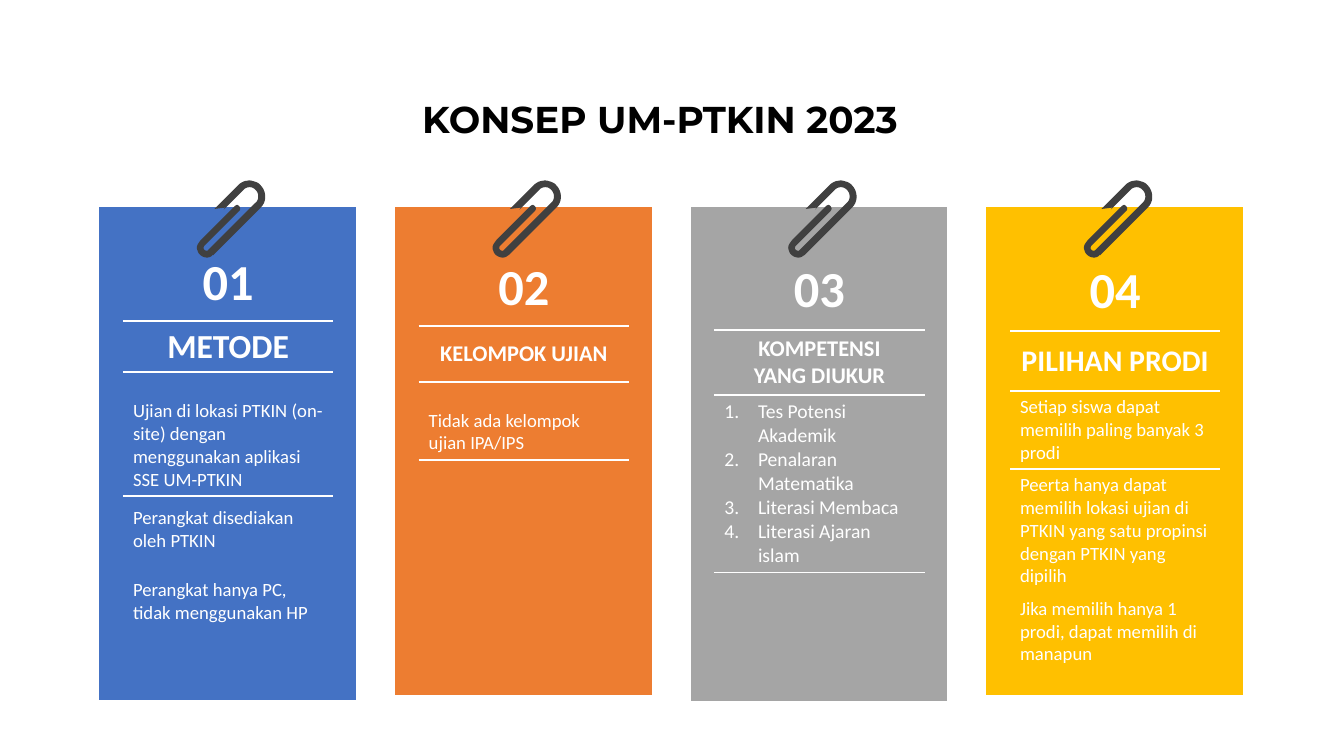
from lxml.etree import SubElement
from pptx import Presentation
from pptx.dml.color import RGBColor
from pptx.enum.text import MSO_ANCHOR as Anchor, PP_ALIGN as Align
from pptx.oxml.ns import qn
from pptx.util import Inches, Pt

COLUMNS, ROWS = 20, 11.25  # square grid, one inch a step
NO_GRID_STYLE = "{2D5ABB26-0587-4C30-8999-92F81FD0307C}"
CARD_LEFT, CARD_TOP, CARD_PITCH = 1.48, 3.08, 4.4
CARD_COLUMNS = (0.35, 3.13, 0.34)
CLIP_OFFSET = (1.44, -0.39)
CLIP_START = (0.76, 0)
# Two numbers: a straight step. Six: a Bezier curve's two handles and end.
CLIP_STEPS = [
    (0.80, -0.01, 0.83, 0, 0.86, 0.01), (0.90, 0.02, 0.94, 0.04, 0.96, 0.07),
    (0.99, 0.10, 1.01, 0.14, 1.02, 0.18), (1.04, 0.26, 1.02, 0.34, 0.96, 0.40),
    (0.25, 1.11), (0.25, 1.10),
    (0.22, 1.14, 0.17, 1.15, 0.13, 1.14), (0.08, 1.13, 0.03, 1.09, 0.02, 1.04),
    (0, 1.00, 0.01, 0.96, 0.04, 0.92), (0.07, 0.88), (0.57, 0.38),
    (0.58, 0.37, 0.60, 0.36, 0.61, 0.36), (0.62, 0.36, 0.63, 0.37, 0.64, 0.38),
    (0.66, 0.40, 0.66, 0.43, 0.64, 0.45), (0.12, 0.97),
    (0.11, 0.98, 0.11, 1.00, 0.11, 1.01), (0.12, 1.03, 0.13, 1.04, 0.15, 1.04),
    (0.16, 1.05, 0.17, 1.04, 0.18, 1.03), (0.88, 0.33),
    (0.92, 0.30, 0.93, 0.25, 0.92, 0.20), (0.91, 0.16, 0.88, 0.12, 0.83, 0.10),
    (0.78, 0.09, 0.73, 0.10, 0.70, 0.14), (0.41, 0.43), (0.43, 0.40),
    (0.27, 0.42), (0.64, 0.05), (0.68, 0.02, 0.72, 0, 0.76, 0),
]
# Each body entry is the list of paragraphs of one row.
CARDS = [
    dict(fill="4472C4", heading=["METODE"], size=36,
         rows=[0.56, 1.14, 0.76, 1.84, 1, 1.16, 0.88],
         anchors=[Anchor.BOTTOM, Anchor.MIDDLE, Anchor.MIDDLE],
         body=[["Ujian di lokasi PTKIN (on-site) dengan menggunakan aplikasi SSE UM-PTKIN"],
               ["Perangkat disediakan oleh PTKIN"],
               ["Perangkat hanya PC, tidak menggunakan HP"]]),
    dict(fill="ED7D31", heading=["KELOMPOK UJIAN"], size=24,
         rows=[0.64, 1.13, 0.83, 1.16, 1.15, 1.34, 1.01],
         anchors=[Anchor.BOTTOM],
         body=[["Tidak ada kelompok ujian IPA/IPS"]]),
    dict(fill="A5A5A5", heading=["KOMPETENSI", "YANG DIUKUR"], size=24,
         rows=[0.65, 1.18, 0.97, 2.64, 1.92],
         anchors=[Anchor.MIDDLE], numbered=True, body_size=21,
         body=[["Tes Potensi Akademik", "Penalaran Matematika",
                "Literasi Membaca", "Literasi Ajaran islam"]]),
    dict(fill="FFC000", heading=["PILIHAN PRODI"], size=32,
         rows=[0.66, 1.19, 0.89, 1.16, 1.84, 1.52],
         anchors=[Anchor.MIDDLE, Anchor.MIDDLE, Anchor.TOP],
         body=[["Setiap siswa dapat memilih paling banyak 3 prodi"],
               ["Peerta hanya dapat memilih lokasi ujian di PTKIN yang satu "
                "propinsi dengan PTKIN yang dipilih"],
               ["Jika memilih hanya 1 prodi, dapat memilih di manapun"]]),
]


def color(value):
    return RGBColor.from_string(value)


def curve_points(start, step, pieces=6):
    """Points along a cubic Bezier curve, without its start."""
    knots = [start, step[:2], step[2:4], step[4:]]
    for index in range(1, pieces + 1):
        t = index / pieces
        weights = ((1 - t) ** 3, 3 * t * (1 - t) ** 2, 3 * t * t * (1 - t), t ** 3)
        yield tuple(sum(w * knot[axis] for w, knot in zip(weights, knots))
                    for axis in (0, 1))


class Board:
    """Holds the style and the current slide."""
    font, title_font = "Calibri", "Montserrat"
    white, black, clip = "FFFFFF", "000000", "404040"

    def __init__(self, deck):
        self.step = deck.slide_width / COLUMNS
        self.slide = deck.slides.add_slide(deck.slide_layouts[6])

    def units(self, *lengths):
        return [round(length * self.step) for length in lengths]

    def run(self, para, text, size, bold=False, ink=None, font=None):
        span = para.add_run()
        span.text = text
        span.font.size, span.font.bold = Pt(size), bold
        span.font.name = font or self.font
        span.font.color.rgb = color(ink or self.white)

    def title(self, text, *place):
        box = self.slide.shapes.add_textbox(*self.units(*place))
        box.text_frame.word_wrap = True
        para = box.text_frame.paragraphs[0]
        para.alignment = Align.CENTER
        self.run(para, text, 40, True, self.black, self.title_font)

    def rule(self, upper, lower):
        """Line between two cells that meet."""
        for cell, side in ((upper, "a:lnB"), (lower, "a:lnT")):
            line = cell._tc.get_or_add_tcPr().makeelement(qn(side), w=str(Pt(2.25)))
            fill = SubElement(line, qn("a:solidFill"))
            SubElement(fill, qn("a:srgbClr"), val=self.white)
            properties = cell._tc.tcPr
            fill_at = properties.index(properties.find(qn("a:solidFill")))
            properties.insert(fill_at, line)

    def number(self, para):
        properties = para._p.get_or_add_pPr()
        properties.set("marL", str(Inches(0.5)))
        properties.set("indent", str(-Inches(0.5)))
        SubElement(properties, qn("a:buFont"), typeface="+mj-lt")
        SubElement(properties, qn("a:buAutoNum"), type="arabicPeriod")

    def prepare(self, cell, anchor=Anchor.MIDDLE):
        cell.vertical_anchor = anchor
        cell.margin_left = cell.margin_right = Inches(0.15)
        cell.margin_top = cell.margin_bottom = Inches(0.07)
        return cell.text_frame

    def heading(self, cell, lines, size):
        para = self.prepare(cell).paragraphs[0]
        para.alignment = Align.CENTER
        for index, line in enumerate(lines):
            if index:
                para.add_line_break()
            self.run(para, line, size, True)

    def body(self, cell, texts, anchor, size, numbered):
        frame = self.prepare(cell, anchor)
        for index, text in enumerate(texts):
            para = frame.add_paragraph() if index else frame.paragraphs[0]
            if numbered:
                self.number(para)
            self.run(para, text, size)

    def card(self, order, left, top, fill, heading, size, rows, anchors, body,
             body_size=20, numbered=False):
        place = self.units(left, top, sum(CARD_COLUMNS), sum(rows))
        table = self.slide.shapes.add_table(len(rows), len(CARD_COLUMNS), *place).table
        table.first_row = table.horz_banding = False
        table._tbl.tblPr.find(qn("a:tableStyleId")).text = NO_GRID_STYLE
        for column, width in zip(table.columns, self.units(*CARD_COLUMNS)):
            column.width = width
        for row, height in zip(table.rows, self.units(*rows)):
            row.height = height
        for cell in table.iter_cells():
            cell.fill.solid()
            cell.fill.fore_color.rgb = color(fill)
        middle = [table.cell(row, 1) for row in range(len(rows))]
        self.heading(middle[1], [f"{order:02}"], 54)
        self.heading(middle[2], heading, size)
        for cell, texts, anchor in zip(middle[3:], body, anchors):
            self.body(cell, texts, anchor, body_size, numbered)
        self.rule(middle[2], middle[3])
        self.rule(middle[1], middle[2])

    def paperclip(self, left, top):
        points = [CLIP_START]
        for step in CLIP_STEPS:
            points += [step] if len(step) == 2 else curve_points(points[-1], step)
        start, *rest = [self.units(left + x, top + y) for x, y in points]
        builder = self.slide.shapes.build_freeform(*start)
        builder.add_line_segments(rest, close=True)
        shape = builder.convert_to_shape()
        shape.shadow.inherit = False
        shape.fill.solid()
        shape.fill.fore_color.rgb = color(self.clip)
        shape.line.fill.background()


def main():
    deck = Presentation()
    deck.slide_width, deck.slide_height = Inches(COLUMNS), Inches(ROWS)
    board = Board(deck)
    for index, card in enumerate(CARDS):
        left = CARD_LEFT + index * CARD_PITCH
        board.card(index + 1, left, CARD_TOP, **card)
        board.paperclip(left + CLIP_OFFSET[0], CARD_TOP + CLIP_OFFSET[1])
    board.title("KONSEP UM-PTKIN 2023", 3.14, 1.38, 13.36, 0.77)
    deck.save("out.pptx")


if __name__ == "__main__":
    main()
